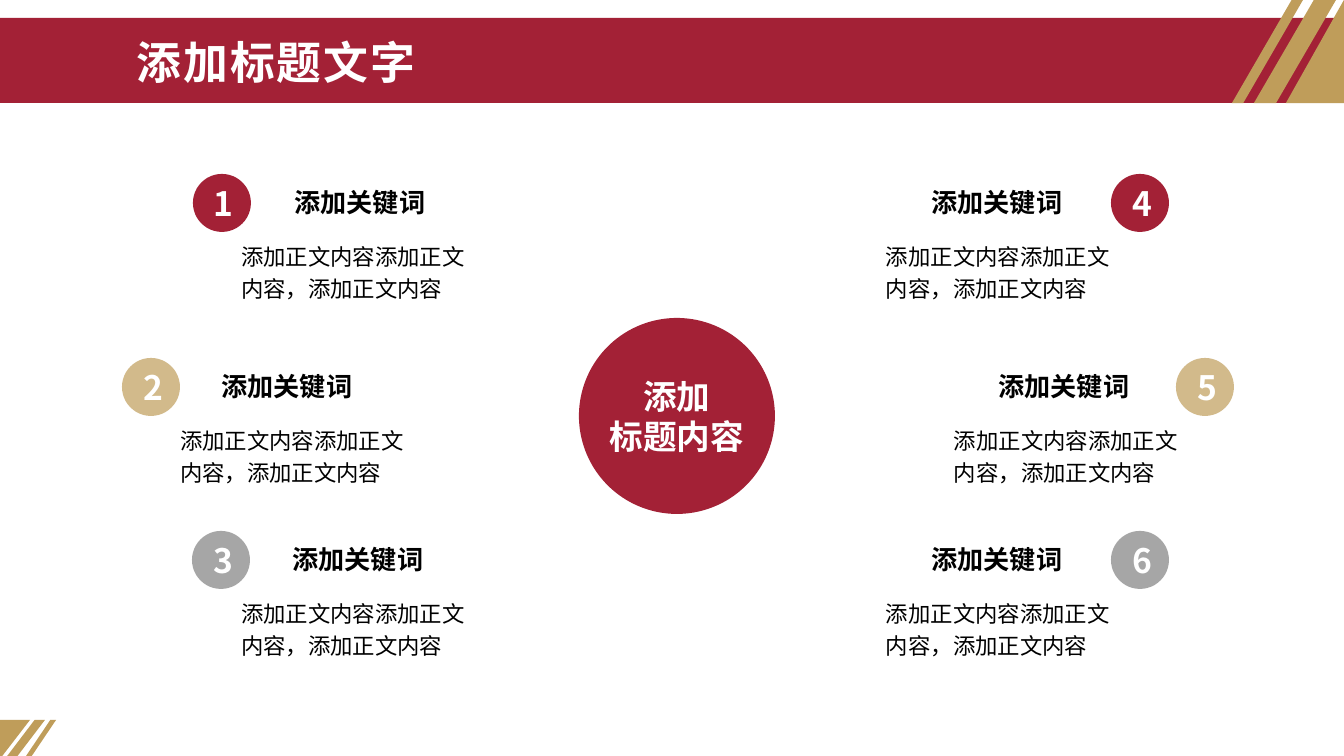
from lxml.etree import SubElement
from pptx import Presentation
from pptx.dml.color import RGBColor
from pptx.enum.shapes import MSO_SHAPE
from pptx.enum.text import MSO_ANCHOR, MSO_AUTO_SIZE, PP_ALIGN
from pptx.oxml.ns import qn
from pptx.util import Emu, Pt

FONT = "Noto Sans CJK SC"
RED, GOLD, SAND, GREY = "A32136", "BF9D5A", "D2BA8B", "A6A6A6"
WHITE, BLACK = "FFFFFF", "000000"

TITLE = "添加标题文字"
CENTER_LINES = ["添加", "标题内容"]
KEYWORD = "添加关键词"
BODY = "添加正文内容添加正文内容，添加正文内容"

# preset, box in px, colour, flip attribute, adjustment
DECORATIONS = [
    (MSO_SHAPE.RECTANGLE, (0, 18, 1344, 85), RED, None, None),
    (MSO_SHAPE.RIGHT_TRIANGLE, (1286, 0, 58, 103), GOLD, "flipH", None),
    (MSO_SHAPE.PARALLELOGRAM, (1254, 0, 82, 103), GOLD, None, 0.73),
    (MSO_SHAPE.PARALLELOGRAM, (1232, 0, 71, 103), GOLD, None, 0.84),
    (MSO_SHAPE.RIGHT_TRIANGLE, (0, 720, 30, 39), GOLD, "flipV", None),
    (MSO_SHAPE.PARALLELOGRAM, (5, 720, 40, 39), GOLD, None, 0.76),
    (MSO_SHAPE.PARALLELOGRAM, (24, 720, 32, 39), GOLD, None, 0.82),
]
# top of each row in px, badge colour
ROWS = [(174, RED), (358, SAND), (531, GREY)]
# body width, body left inset, then left edges of badge, keyword and body per row
COLUMNS = [
    (262, 13, [(193, 210, 228), (122, 137, 167), (192, 208, 228)]),
    (254, 16, [(1111, 847, 870), (1176, 914, 938), (1111, 847, 870)]),
]
BADGE, KEYWORD_WIDTH, KEYWORD_HEIGHT, BODY_HEIGHT = 58, 300, 57, 77


def px(value):
    return Emu(round(value * 914400 / 134.4))


def color(code):
    return RGBColor.from_string(code)


def add_filled(page, preset, box, fill):
    shape = page.shapes.add_shape(preset, *map(px, box))
    shape.shadow.inherit = False
    shape.fill.solid()
    shape.fill.fore_color.rgb = color(fill)
    shape.line.fill.background()
    return shape


def write(shape, lines, size, code, bold=True, align=PP_ALIGN.CENTER,
          anchor=MSO_ANCHOR.MIDDLE, insets=(0, 0, 0, 0)):
    """Write the lines as one paragraph with line breaks; return the paragraph."""
    frame = shape.text_frame
    frame.word_wrap = True
    frame.auto_size = MSO_AUTO_SIZE.NONE
    frame.vertical_anchor = anchor
    (frame.margin_left, frame.margin_top,
     frame.margin_right, frame.margin_bottom) = map(px, insets)
    para = frame.paragraphs[0]
    para.alignment = align
    for index, line in enumerate(lines):
        if index:
            para.add_line_break()
        span = para.add_run()
        span.text = line
        span.font.size = Pt(size)
        span.font.bold = bold
        span.font.color.rgb = color(code)
        span.font.name = FONT
        SubElement(span.font._element, qn("a:ea")).set("typeface", FONT)
    return para


def add_decorations(page):
    for preset, box, fill, flip, adjustment in DECORATIONS:
        shape = add_filled(page, preset, box, fill)
        if flip:
            shape._element.spPr.find(qn("a:xfrm")).set(flip, "1")
        if adjustment:
            shape.adjustments[0] = adjustment


def add_title(page):
    title, subtitle = page.placeholders
    subtitle._element.getparent().remove(subtitle._element)
    page.shapes._spTree.append(title._element)  # in front of the band
    title.left, title.top, title.width, title.height = map(px, (124, 28, 1044, 67))
    para = write(title, [TITLE], 24, WHITE, align=PP_ALIGN.LEFT, insets=(13, 7, 13, 7))
    para.line_spacing = 1.0
    para.runs[0].font._element.set("spc", "100")


def add_items(page):
    number = 0
    for body_width, inset, lefts in COLUMNS:
        for (top, fill), (badge_x, keyword_x, body_x) in zip(ROWS, lefts):
            number += 1
            keyword = add_filled(page, MSO_SHAPE.ROUNDED_RECTANGLE,
                                 (keyword_x, top, KEYWORD_WIDTH, KEYWORD_HEIGHT), WHITE)
            keyword.adjustments[0] = 0.5
            write(keyword, [KEYWORD], 14, BLACK)
            badge = add_filled(page, MSO_SHAPE.OVAL, (badge_x, top, BADGE, BADGE), fill)
            write(badge, [str(number)], 18, WHITE, insets=(4, 0, 0, 0))
            body = page.shapes.add_textbox(
                *map(px, (body_x, top + KEYWORD_HEIGHT, body_width, BODY_HEIGHT)))
            para = write(body, [BODY], 12, BLACK, bold=False, align=PP_ALIGN.LEFT,
                         anchor=MSO_ANCHOR.TOP, insets=(inset, 7, 11, 7))
            para.line_spacing = 1.2


def main():
    deck = Presentation()
    deck.slide_width, deck.slide_height = px(1344), px(756)
    page = deck.slides.add_slide(deck.slide_layouts[0])
    add_decorations(page)
    add_title(page)
    add_items(page)
    center = add_filled(page, MSO_SHAPE.OVAL, (579, 318, 196, 196), RED)
    write(center, CENTER_LINES, 18, WHITE)
    deck.save("out.pptx")


if __name__ == "__main__":
    main()
